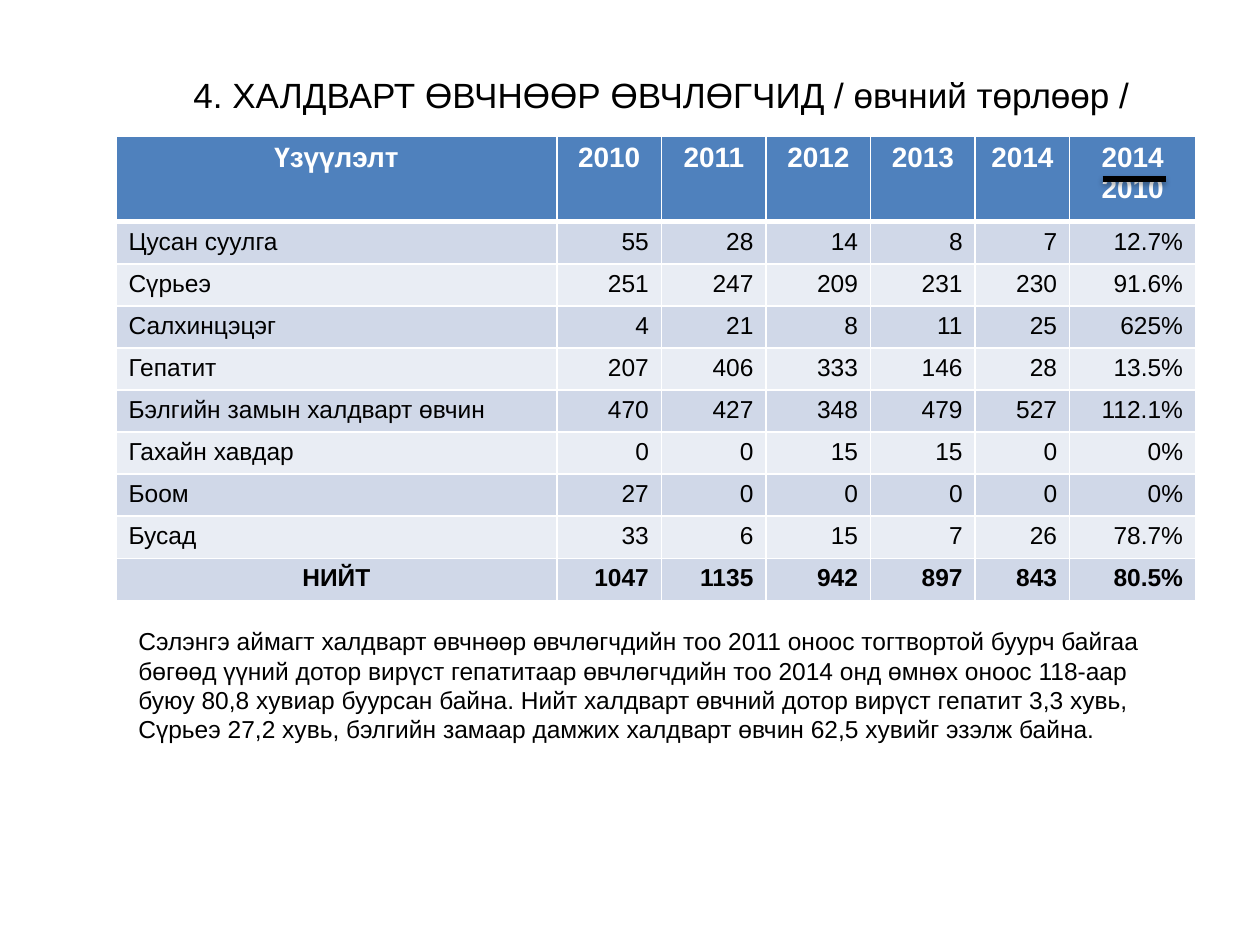
from lxml.etree import SubElement
from pptx import Presentation
from pptx.dml.color import RGBColor as Rgb
from pptx.enum.shapes import MSO_CONNECTOR as Connector
from pptx.enum.text import MSO_ANCHOR as Anchor, PP_ALIGN as Align
from pptx.oxml.ns import qn
from pptx.util import Inches, Pt

COLORS = {"text": "000000", "white": "FFFFFF", "header": "4F81BD",
          "odd": "D0D8E8", "even": "E9EDF4"}

TITLE = "4. ХАЛДВАРТ ӨВЧНӨӨР ӨВЧЛӨГЧИД / өвчний төрлөөр /"
SUMMARY = (
    "Сэлэнгэ аймагт халдварт өвчнөөр өвчлөгчдийн тоо 2011 оноос тогтвортой буурч байгаа "
    "бөгөөд үүний дотор вирүст гепатитаар өвчлөгчдийн тоо 2014 онд өмнөх оноос 118-аар "
    "буюу 80,8 хувиар буурсан байна. Нийт халдварт өвчний дотор вирүст гепатит 3,3 хувь, "
    "Сүрьеэ 27,2 хувь, бэлгийн замаар дамжих халдварт өвчин 62,5 хувийг эзэлж байна."
)
DISEASE_ROWS = [
    ["Үзүүлэлт", "2010", "2011", "2012", "2013", "2014", "2014 2010"],
    ["Цусан суулга", "55", "28", "14", "8", "7", "12.7%"],
    ["Сүрьеэ", "251", "247", "209", "231", "230", "91.6%"],
    ["Салхинцэцэг", "4", "21", "8", "11", "25", "625%"],
    ["Гепатит", "207", "406", "333", "146", "28", "13.5%"],
    ["Бэлгийн замын халдварт өвчин", "470", "427", "348", "479", "527", "112.1%"],
    ["Гахайн хавдар", "0", "0", "15", "15", "0", "0%"],
    ["Боом", "27", "0", "0", "0", "0", "0%"],
    ["Бусад", "33", "6", "15", "7", "26", "78.7%"],
    ["НИЙТ", "1047", "1135", "942", "897", "843", "80.5%"],
]
COLUMN_WIDTHS = [3.5] + [0.83] * 4 + [0.75, 1]
ROW_HEIGHTS = [0.68] + [0.32] * 9


class SlideBuilder:
    """Draws styled elements on the current slide."""

    def __init__(self, slide, font="Arial"):
        self.slide = slide
        self.font = font

    def fill_frame(self, frame, text, size, color="text", bold=False, align=Align.LEFT):
        paragraph = frame.paragraphs[0]
        paragraph.alignment = align
        run = paragraph.add_run()
        run.text = text
        for name, value in {"name": self.font, "size": Pt(size), "bold": bold}.items():
            setattr(run.font, name, value)
        run.font.color.rgb = Rgb.from_string(COLORS[color])

    def text(self, text, left, top, width, height, size, align=Align.LEFT, anchor=Anchor.TOP):
        box = self.slide.shapes.add_textbox(*map(Inches, (left, top, width, height)))
        frame = box.text_frame
        for name, value in {"word_wrap": True, "vertical_anchor": anchor}.items():
            setattr(frame, name, value)
        self.fill_frame(frame, text, size, align=align)

    def borders(self, cell, widths):
        properties = cell._tc.get_or_add_tcPr()
        for side, width in widths.items():
            line = SubElement(properties, qn(f"a:ln{side}"), w=str(Pt(width)))
            fill = SubElement(line, qn("a:solidFill"))
            SubElement(fill, qn("a:srgbClr"), val=COLORS["white"])

    def table(self, rows, left, top, widths, heights):
        size = map(Inches, (left, top, sum(widths), sum(heights)))
        table = self.slide.shapes.add_table(len(rows), len(widths), *size).table
        for column, width in zip(table.columns, widths):
            column.width = Inches(width)
        for row, height in zip(table.rows, heights):
            row.height = Inches(height)
        last = len(rows) - 1
        for i, values in enumerate(rows):
            header = i == 0
            band = "header" if header else "odd" if i % 2 else "even"
            for j, value in enumerate(values):
                cell = table.cell(i, j)
                self.borders(cell, {"L": 1, "R": 1, "T": 3 if i == 1 else 1,
                                    "B": 3 if header else 1})
                cell.fill.solid()
                cell.fill.fore_color.rgb = Rgb.from_string(COLORS[band])
                if header or (i == last and j == 0):
                    align = Align.CENTER
                else:
                    align = Align.RIGHT if j else Align.LEFT
                self.fill_frame(cell.text_frame, value, 16 if header else 14,
                                "white" if header else "text", i in (0, last), align)

    def line(self, left, top, right, bottom, width):
        ends = map(Inches, (left, top, right, bottom))
        connector = self.slide.shapes.add_connector(Connector.STRAIGHT, *ends)
        connector.line.width = Pt(width)
        connector.line.color.rgb = Rgb.from_string(COLORS["text"])
        effects = SubElement(connector._element.spPr, qn("a:effectLst"))
        shadow = SubElement(effects, qn("a:outerShdw"), blurRad=str(Pt(3.1)),
                            dist=str(Pt(1.8)), dir="5400000", rotWithShape="0")
        color = SubElement(shadow, qn("a:srgbClr"), val=COLORS["text"])
        SubElement(color, qn("a:alpha"), val="35000")


def main():
    presentation = Presentation()
    presentation.slide_width, presentation.slide_height = Inches(10), Inches(7.5)
    builder = SlideBuilder(presentation.slides.add_slide(presentation.slide_layouts[6]))
    builder.text(TITLE, 1, 0.5, 8.5, 0.5, 20, Align.CENTER, Anchor.MIDDLE)
    builder.table(DISEASE_ROWS, 0.92, 1.08, COLUMN_WIDTHS, ROW_HEIGHTS)
    builder.text(SUMMARY, 1, 4.92, 8.5, 1.04, 14)
    builder.line(8.75, 1.42, 9.25, 1.42, 3)
    presentation.save("out.pptx")


if __name__ == "__main__":
    main()
